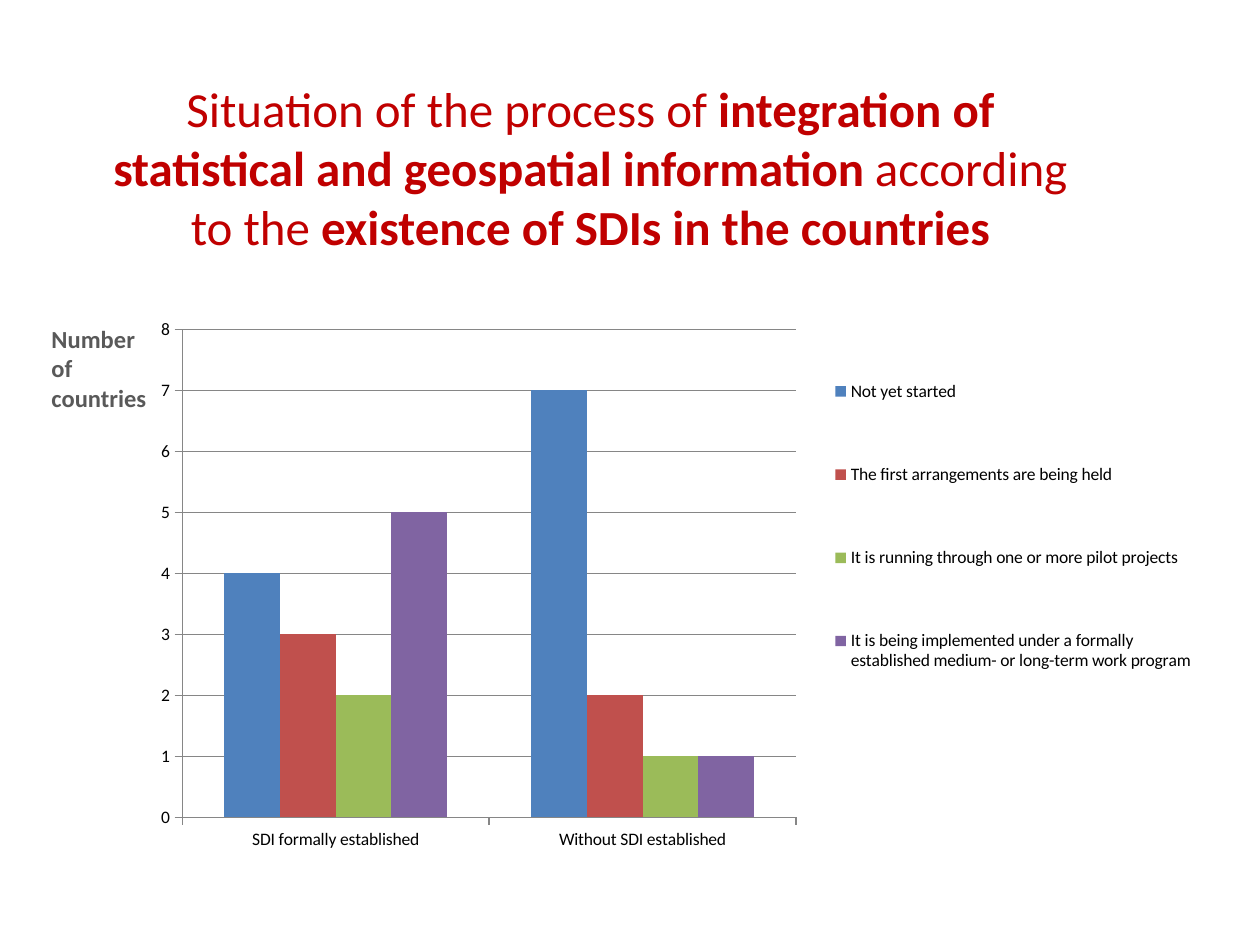
from lxml.etree import SubElement
from pptx import Presentation
from pptx.chart.data import CategoryChartData
from pptx.dml.color import RGBColor
from pptx.enum.chart import XL_CHART_TYPE, XL_LEGEND_POSITION, XL_TICK_MARK
from pptx.enum.text import MSO_AUTO_SIZE, PP_ALIGN
from pptx.oxml.ns import qn
from pptx.util import Inches, Pt

WIDE, HIGH = Inches(10), Inches(7.5)
FACE = "Calibri"
RED = RGBColor(0xC0, 0x00, 0x00)
GREY = RGBColor(0x59, 0x59, 0x59)
LINE = RGBColor(0x86, 0x86, 0x86)
BLACK = RGBColor(0x00, 0x00, 0x00)
BLUE = RGBColor(0x4F, 0x81, 0xBD)
BRICK = RGBColor(0xC0, 0x50, 0x4D)
GREEN = RGBColor(0x9B, 0xBB, 0x59)
PLUM = RGBColor(0x80, 0x64, 0xA2)

TITLE = [
    ("Situation of the process of ", False),
    ("integration of statistical and geospatial information", True),
    (" according to the ", False),
    ("existence of SDIs in the countries", True),
]
GROUPS = ["SDI formally established", "Without SDI established"]
SERIES = [
    ("Not yet started", (4, 7), BLUE),
    ("The first arrangements are being held", (3, 2), BRICK),
    ("It is running through one or more pilot projects", (2, 1), GREEN),
    ("It is being implemented under a formally established "
     "medium- or long-term work program", (5, 1), PLUM),
]


def place(left, top, width, height):
    """Turn shares of the slide into lengths."""
    return (int(left * WIDE), int(top * HIGH),
            int(width * WIDE), int(height * HIGH))


def style(font, size, color, **more):
    for key, value in dict(name=FACE, size=Pt(size), **more).items():
        setattr(font, key, value)
    font.color.rgb = color


def add_text(slide, box, runs, size, color, align):
    frame = slide.shapes.add_textbox(*place(*box)).text_frame
    for key, value in dict(word_wrap=True,
                           auto_size=MSO_AUTO_SIZE.SHAPE_TO_FIT_TEXT).items():
        setattr(frame, key, value)
    para = frame.paragraphs[0]
    para.alignment = align
    for text, bold in runs:
        run = para.add_run()
        run.text = text
        style(run.font, size, color, bold=bold)


def set_layout(part, left, top, width, height, inner=False):
    """Fix a chart part at shares of the chart's frame."""
    layout = part.find(qn("c:layout"))
    if layout is None:
        layout = SubElement(part, qn("c:layout"))
        # The layout goes first in a plot, after the position in a legend
        part.insert(0 if inner else 1, layout)
    manual = SubElement(layout, qn("c:manualLayout"))
    items = [("layoutTarget", "inner")] if inner else []
    items += [("xMode", "edge"), ("yMode", "edge"),
              ("x", left), ("y", top), ("w", width), ("h", height)]
    for tag, value in items:
        SubElement(manual, qn("c:" + tag)).set("val", str(value))


def style_axis(axis, grid):
    for key, value in dict(has_major_gridlines=grid,
                           major_tick_mark=XL_TICK_MARK.OUTSIDE,
                           minor_tick_mark=XL_TICK_MARK.NONE).items():
        setattr(axis, key, value)
    lines = [axis.format.line]
    if grid:
        lines.append(axis.major_gridlines.format.line)
    for line in lines:
        line.color.rgb = LINE
        line.width = Pt(0.75)


def add_bars(slide, box):
    data = CategoryChartData()
    data.categories = GROUPS
    for name, values, _ in SERIES:
        data.add_series(name, values)
    chart = slide.shapes.add_chart(
        XL_CHART_TYPE.COLUMN_CLUSTERED, *place(*box), data).chart
    chart.has_title = False
    style(chart.font, 10, BLACK)

    # Bars
    plot = chart.plots[0]
    for key, value in dict(gap_width=150, overlap=0,
                           vary_by_categories=False).items():
        setattr(plot, key, value)
    for bars, (_, _, color) in zip(plot.series, SERIES):
        bars.format.fill.solid()
        bars.format.fill.fore_color.rgb = color

    # Axes
    style_axis(chart.category_axis, False)
    style_axis(chart.value_axis, True)
    for key, value in dict(minimum_scale=0, maximum_scale=8,
                           major_unit=1).items():
        setattr(chart.value_axis, key, value)

    # Legend and plot area
    chart.has_legend = True
    legend = chart.legend
    legend.position = XL_LEGEND_POSITION.RIGHT
    legend.include_in_layout = False
    area = chart.element.find(".//" + qn("c:plotArea"))
    key_box = chart.element.find(".//" + qn("c:legend"))
    set_layout(area, 0.04, 0.04, 0.58, 0.88, inner=True)
    set_layout(key_box, 0.65, 0.02, 0.35, 0.75)


def main():
    deck = Presentation()
    deck.slide_width, deck.slide_height = WIDE, HIGH
    slide = deck.slides.add_slide(deck.slide_layouts[6])
    # Axis caption, title, chart
    add_text(slide, (0.031, 0.336, 0.102, 0.108),
             [("Number of countries", True)], 14, GREY, PP_ALIGN.LEFT)
    add_text(slide, (0.075, 0.077, 0.787, 0.201),
             TITLE, 28, RED, PP_ALIGN.CENTER)
    add_bars(slide, (0.111, 0.325, 0.84, 0.587))
    deck.save("out.pptx")


if __name__ == "__main__":
    main()
